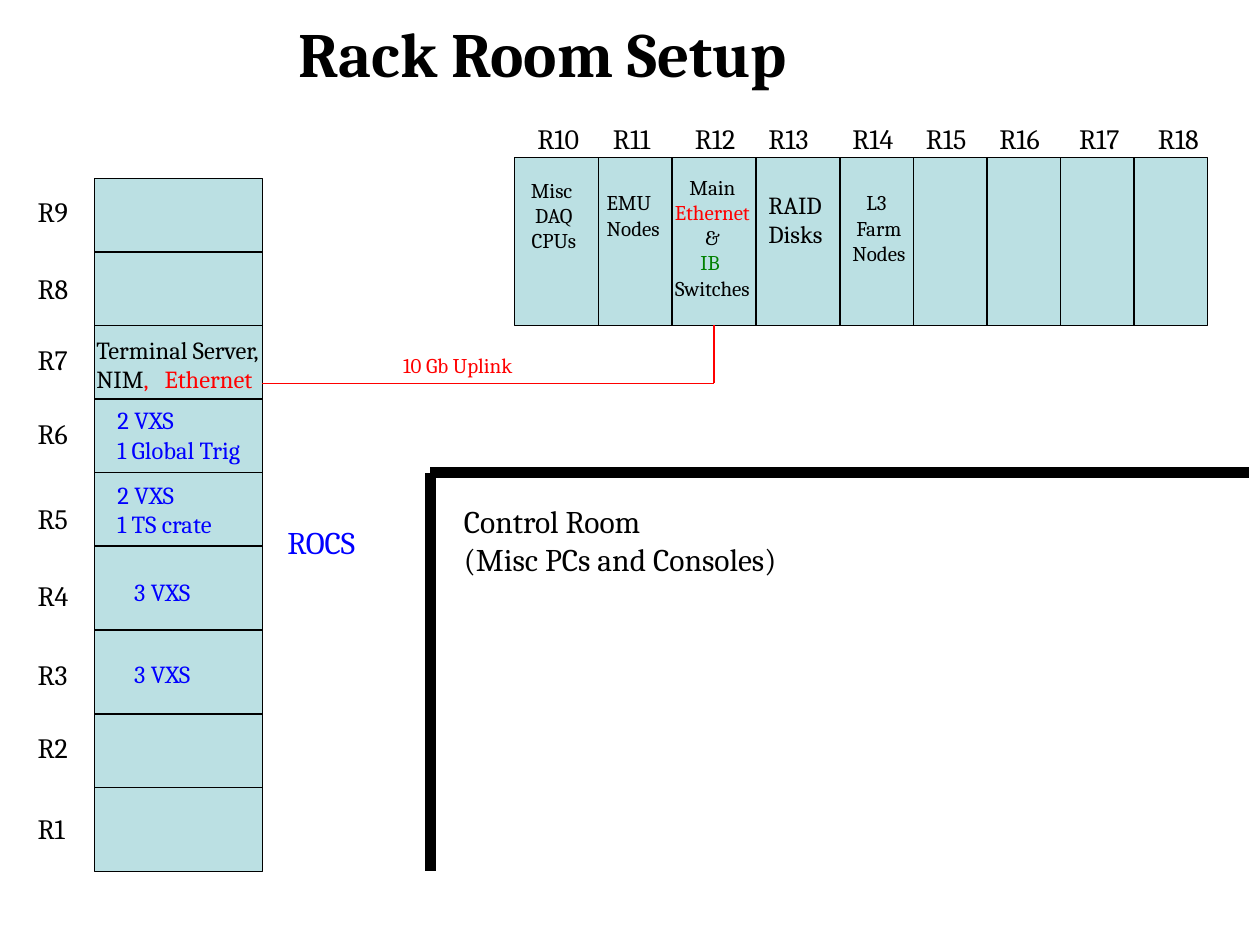
from dataclasses import dataclass
from itertools import accumulate

from lxml.etree import SubElement
from pptx import Presentation
from pptx.dml.color import RGBColor
from pptx.enum.shapes import MSO_CONNECTOR as CONN, MSO_SHAPE as SHAPE
from pptx.enum.text import MSO_ANCHOR as ANCHOR, MSO_AUTO_SIZE as FIT, PP_ALIGN as ALIGN
from pptx.oxml.ns import qn
from pptx.util import Emu, Pt

PX = 7620  # 120 px to the inch
FONT = "Cambria"
BLACK, RED, GREEN, BLUE, RACK = "000000", "FF0000", "008000", "0000FF", "BBE0E3"


@dataclass(frozen=True)
class Run:
    text: str
    color: str


@dataclass(frozen=True)
class Label:
    """A text box; a line is a plain string or a tuple of runs."""
    x: int
    y: int
    w: int
    h: int
    size: int
    lines: tuple
    color: str = BLACK
    align: ALIGN = ALIGN.LEFT
    tab: int = 0


@dataclass(frozen=True)
class Bank:
    """A row or column of racks, divided by the size of each rack."""
    x: int
    y: int
    depth: int
    sizes: tuple[int, ...]
    across: bool


def px(n: int) -> Emu:
    return Emu(n * PX)


def rgb(color: str) -> RGBColor:
    return RGBColor.from_string(color)


def set_font(font, color: str, **values) -> None:
    for name, value in {"name": FONT, **values}.items():
        setattr(font, name, value)
    font.color.rgb = rgb(color)


def add_line(shapes, x1: int, y1: int, x2: int, y2: int,
             color: str = BLACK, width: float = 0.75) -> None:
    ln = shapes.add_connector(CONN.STRAIGHT, px(x1), px(y1), px(x2), px(y2))
    ln.line.color.rgb = rgb(color)
    ln.line.width = Pt(width)
    SubElement(ln._element.spPr, qn("a:effectLst"))


def add_bank(shapes, bank: Bank) -> None:
    group = shapes.add_group_shape().shapes
    length = sum(bank.sizes)
    w, h = (length, bank.depth) if bank.across else (bank.depth, length)
    sp = group.add_shape(SHAPE.RECTANGLE, px(bank.x), px(bank.y), px(w), px(h))
    sp.shadow.inherit = False
    sp.fill.solid()
    sp.fill.fore_color.rgb = rgb(RACK)
    sp.line.color.rgb = rgb(BLACK)
    sp.line.width = Pt(0.75)
    for d in accumulate(bank.sizes[:-1]):
        if bank.across:
            add_line(group, bank.x + d, bank.y, bank.x + d, bank.y + h)
        else:
            add_line(group, bank.x, bank.y + d, bank.x + w, bank.y + d)


def add_label(shapes, label: Label) -> None:
    box = shapes.add_textbox(px(label.x), px(label.y), px(label.w), px(label.h))
    tf = box.text_frame
    tf.word_wrap = False
    tf.auto_size = FIT.SHAPE_TO_FIT_TEXT
    for i, line in enumerate(label.lines):
        p = tf.add_paragraph() if i else tf.paragraphs[0]
        p.alignment = label.align
        if label.tab:
            tabs = SubElement(p._p.get_or_add_pPr(), qn("a:tabLst"))
            SubElement(tabs, qn("a:tab"), pos=str(px(label.tab)), algn="l")
        for run in (Run(line, label.color),) if isinstance(line, str) else line:
            r = p.add_run()
            r.text = run.text
            set_font(r.font, run.color, size=Pt(label.size))


BANKS = (
    Bank(90, 170, 160, (70, 70, 70, 70, 70, 80, 80, 70, 80), across=False),
    Bank(490, 150, 160, (80, 70, 80, 80, 70, 70, 70, 70, 70), across=True),
)

# Rack numbers: tops of R1 to R9, lefts of R10 to R18
ROW_TOPS = (767, 690, 620, 545, 472, 391, 320, 253, 179)
COLUMN_LEFTS = (500, 572, 650, 720, 800, 870, 940, 1016, 1091)
NUMBERS = (
    *(Label(24, y, 55, 44, 16, (f"R{n}",)) for n, y in enumerate(ROW_TOPS, 1)),
    *(Label(x, 110, 70, 44, 16, (f"R{n}",)) for n, x in enumerate(COLUMN_LEFTS, 10)),
)

CONTENTS = (
    # Left column
    Label(80, 313, 181, 69, 14,
          ("Terminal Server,",
           (Run("NIM", BLACK), Run(",\tEthernet", RED))), tab=65),
    Label(100, 380, 151, 69, 14, ("2 VXS", "1 Global Trig"), BLUE),
    Label(100, 451, 121, 69, 14, ("2 VXS", "1 TS crate"), BLUE),
    *(Label(116, y, 89, 40, 14, ("3 VXS",), BLUE) for y in (544, 622)),
    # Top row
    Label(492, 163, 71, 85, 12, ("Misc ", "DAQ", "CPUs"), align=ALIGN.CENTER),
    Label(566, 175, 76, 60, 12, ("EMU", "Nodes")),
    Label(630, 160, 97, 133, 12,
          ("Main", (Run("Ethernet", RED),), "&", (Run("IB ", GREEN),), "Switches"),
          align=ALIGN.CENTER),
    Label(720, 175, 82, 69, 14, ("RAID", "Disks")),
    Label(799, 175, 76, 85, 12, ("L3 ", "Farm", "Nodes"), align=ALIGN.CENTER),
    # Room
    Label(430, 472, 331, 85, 18, ("Control Room", "(Misc PCs and Consoles)")),
    Label(262, 492, 103, 48, 18, ("ROCS",), BLUE),
    Label(372, 330, 136, 36, 12, ("10 Gb Uplink",), RED),
)


def main() -> None:
    prs = Presentation()
    prs.slide_width, prs.slide_height = px(1200), px(900)
    s = prs.slides.add_slide(prs.slide_layouts[5])

    # Title
    title = s.shapes.title
    place = {"left": 7, "top": 0, "width": 1020, "height": 100}
    for name, value in place.items():
        setattr(title, name, px(value))
    tf = title.text_frame
    tf.text = "Rack Room Setup"
    tf.vertical_anchor = ANCHOR.MIDDLE
    p = tf.paragraphs[0]
    p.alignment = ALIGN.CENTER
    set_font(p.runs[0].font, BLACK, size=Pt(36), bold=True)

    # Racks
    for bank in BANKS:
        add_bank(s.shapes, bank)

    # Control room walls
    add_line(s.shapes, 410, 450, 410, 830, width=6)
    add_line(s.shapes, 410, 450, 1190, 450, width=6)

    # Uplink
    uplink = s.shapes.add_group_shape().shapes
    add_line(uplink, 250, 365, 680, 365, RED)
    add_line(uplink, 680, 365, 680, 310, RED)

    for label in NUMBERS + CONTENTS:
        add_label(s.shapes, label)

    prs.save("out.pptx")


if __name__ == "__main__":
    main()
